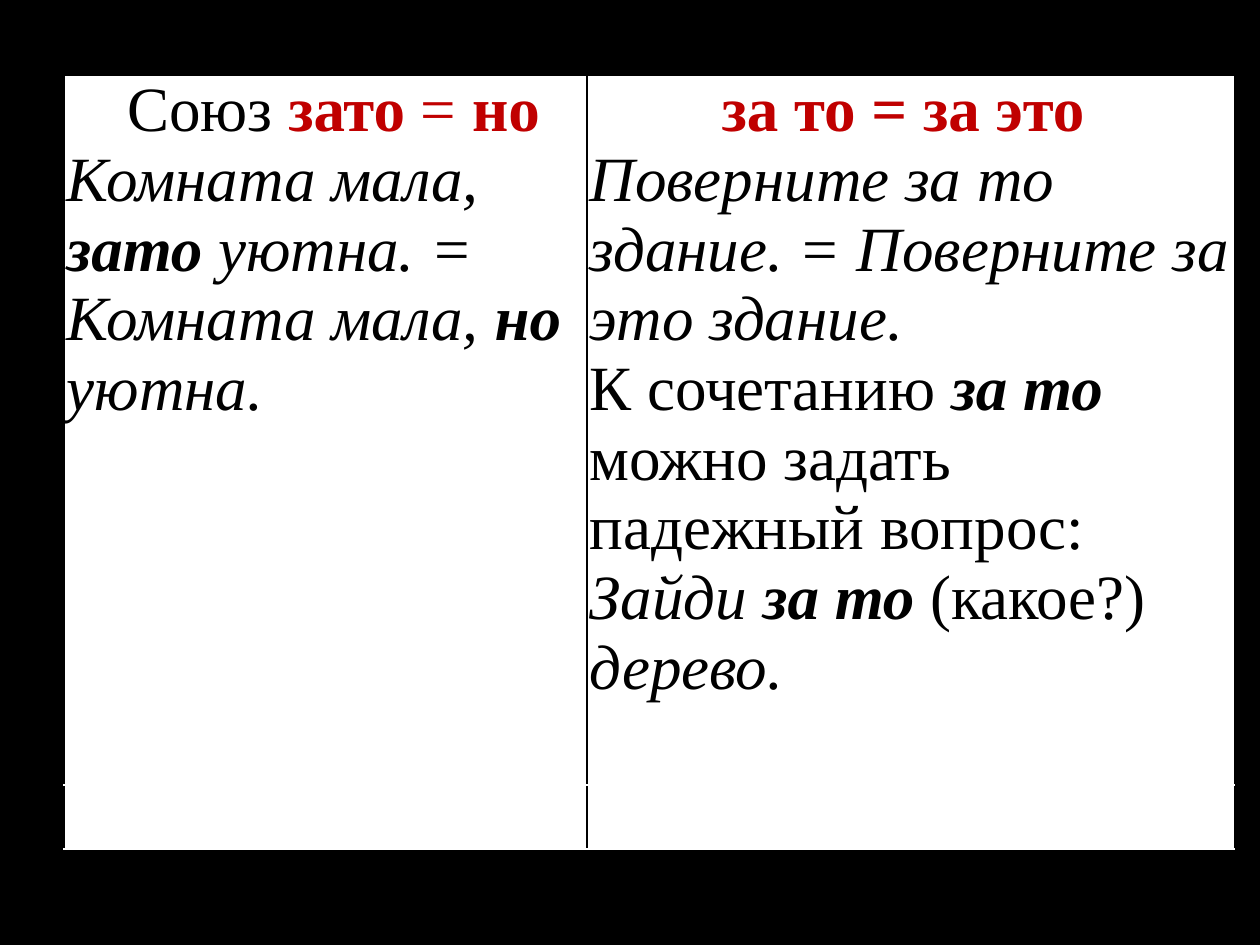
"""Build a slide comparing the conjunction «зато» with the phrase «за то»."""
from lxml.etree import SubElement
from pptx import Presentation
from pptx.dml.color import RGBColor
from pptx.enum.text import PP_ALIGN
from pptx.oxml import parse_xml
from pptx.oxml.ns import nsdecls
from pptx.util import Inches, Pt

BLACK = RGBColor(0x00, 0x00, 0x00)
WHITE = RGBColor(0xFF, 0xFF, 0xFF)
RED = RGBColor(0xC0, 0x00, 0x00)
COLUMNS = (4.15, 5.14)
ROWS = (5.63, 0.51)


def add_span(para, text, bold=False, italic=False, color=BLACK):
    span = para.add_run()
    span.text = text
    span.font.name = "Times New Roman"
    span.font.size = Pt(36)
    span.font.bold = bold
    span.font.italic = italic
    span.font.color.rgb = color


PLAIN = {}
ITALIC = {"italic": True}
STRONG = {"bold": True, "italic": True}
RED_PLAIN = {"color": RED}
RED_BOLD = {"color": RED, "bold": True}

CONJUNCTION = [
    [(" Союз ", PLAIN), ("зато ", RED_BOLD), ("= ", RED_PLAIN), ("но", RED_BOLD)],
    [("Комната мала, ", ITALIC), ("зато ", STRONG),
     ("уютна. = Комната мала, ", ITALIC), ("но ", STRONG), ("уютна.", ITALIC)],
]
PHRASE = [
    [("за то = за это ", RED_BOLD)],
    [("Поверните за то здание. = Поверните за это здание.", ITALIC)],
    [("К сочетанию ", PLAIN), ("за то ", STRONG),
     ("можно задать падежный вопрос: ", PLAIN), ("Зайди ", ITALIC),
     ("за то ", STRONG), ("(какое?) ", PLAIN), ("дерево.", ITALIC)],
]

deck = Presentation()
deck.slide_width, deck.slide_height = Inches(10), Inches(7.5)
page = deck.slides.add_slide(deck.slide_layouts[6])
page.background.fill.solid()
page.background.fill.fore_color.rgb = BLACK

table = page.shapes.add_table(
    len(ROWS), len(COLUMNS), Inches(0.51), Inches(0.6),
    Inches(sum(COLUMNS)), Inches(sum(ROWS))).table
table.first_row = False
table.horz_banding = False
for column, width in zip(table.columns, COLUMNS):
    column.width = Inches(width)
for row, height in zip(table.rows, ROWS):
    row.height = Inches(height)

for row_number, row in enumerate(table.rows):
    sides = ("lnL", "lnR", "lnT") if row_number == 0 else ("lnL", "lnR")
    for cell in row.cells:
        cell.fill.solid()
        cell.fill.fore_color.rgb = WHITE
        properties = cell._tc.get_or_add_tcPr()
        for position, side in enumerate(sides):
            border = parse_xml(f'<a:{side} {nsdecls("a")} w="{Pt(1)}"><a:solidFill/></a:{side}>')
            SubElement(border[0], border[0].tag.replace("solidFill", "srgbClr"), val=str(BLACK))
            properties.insert(position, border)

for cell, paragraphs in zip(table.rows[0].cells, (CONJUNCTION, PHRASE)):
    cell.margin_left = cell.margin_right = Inches(0.02)
    cell.margin_top = cell.margin_bottom = 0
    for number, spans in enumerate(paragraphs):
        para = cell.text_frame.add_paragraph() if number else cell.text_frame.paragraphs[0]
        para.alignment = PP_ALIGN.LEFT if number else PP_ALIGN.CENTER
        for text, style in spans:
            add_span(para, text, **style)

deck.save("out.pptx")
